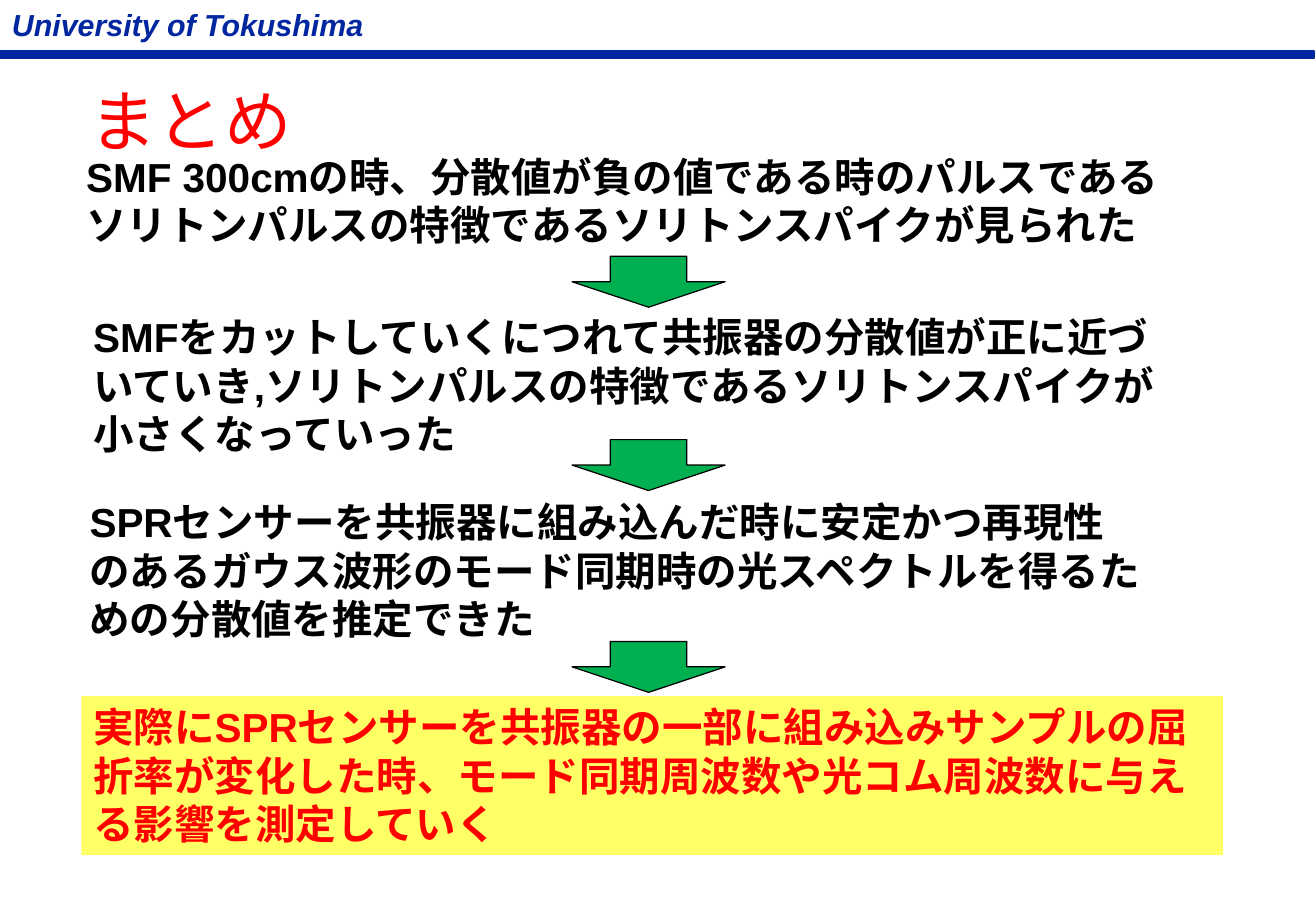
from pptx import Presentation
from pptx import util as u
from pptx.dml.color import RGBColor
from pptx.enum import shapes, text

HUES = {"navy": "00279F", "red": "FF0000", "black": "000000",
        "green": "00B050", "yellow": "FFFF66"}

# words, (left, top, width, height), size, colour, bold, italic, wrap, fill
TEXTS = [
    ("University of Tokushima", (0, 0, 229, 28.8), 18, "navy", True, True, False, None),
    ("まとめ", (46, 43.2, 170, 55.4), 40, "red", False, False, True, None),
    ("SMF 300cmの時、分散値が負の値である時のパルスであるソリトンパルスの特徴であるソリトンスパイクが見られた",
     (43.9, 86.4, 669, 65.5), 24, "black", True, False, True, None),
    ("SMFをカットしていくにつれて共振器の分散値が正に近づいていき,ソリトンパルスの特徴であるソリトンスパイクが小さくなっていった",
     (48.2, 181.4, 657.4, 94.3), 24, "black", True, False, True, None),
    ("SPRセンサーを共振器に組み込んだ時に安定かつ再現性のあるガウス波形のモード同期時の光スペクトルを得るための分散値を推定できた",
     (46, 291, 636.5, 94.3), 24, "black", True, False, True, None),
    ("実際にSPRセンサーを共振器の一部に組み込みサンプルの屈折率が変化した時、モード同期周波数や光コム周波数に与える影響を測定していく",
     (48.2, 412.6, 676.8, 94.3), 24, "red", True, False, True, "yellow"),
]
ARROW_TOPS = [151.9, 260.6, 380.2]
KIND = shapes.MSO_SHAPE


def hue(name):
    return RGBColor.from_string(HUES[name])


def add_form(slide, kind, place, fill, line=None, width=0):
    form = slide.shapes.add_shape(kind, *map(u.Pt, place))
    form.shadow.inherit = False
    form.fill.solid()
    form.fill.fore_color.rgb = hue(fill)
    if line:
        form.line.color.rgb = hue(line)
        form.line.width = u.Pt(width)
    else:
        form.line.fill.background()
    return form


def add_words(slide, words, place, size, color, bold, italic, wrap, fill):
    if fill:
        box = add_form(slide, KIND.RECTANGLE, place, fill)
    else:
        box = slide.shapes.add_textbox(*map(u.Pt, place))
    frame = box.text_frame
    frame.word_wrap = wrap
    frame.auto_size = text.MSO_AUTO_SIZE.SHAPE_TO_FIT_TEXT
    frame.vertical_anchor = text.MSO_ANCHOR.TOP
    para = frame.paragraphs[0]
    para.alignment = text.PP_ALIGN.LEFT
    run = para.add_run()
    run.text = words
    font = run.font
    font.name = "Arial"
    font.size = u.Pt(size)
    font.bold = bold
    font.italic = italic
    font.color.rgb = hue(color)


def main():
    deck = Presentation()
    deck.slide_width, deck.slide_height = u.Pt(780), u.Pt(540)
    slide = deck.slides.add_slide(deck.slide_layouts[6])
    add_form(slide, KIND.RECTANGLE, (0, 30.2, 779, 4.3), "navy", "navy", 1)
    for item in TEXTS:
        add_words(slide, *item)
    for top in ARROW_TOPS:
        add_form(slide, KIND.DOWN_ARROW, (339.1, top, 90.7, 30.2),
                 "green", "black", 0.75)
    deck.save("out.pptx")


if __name__ == "__main__":
    main()
